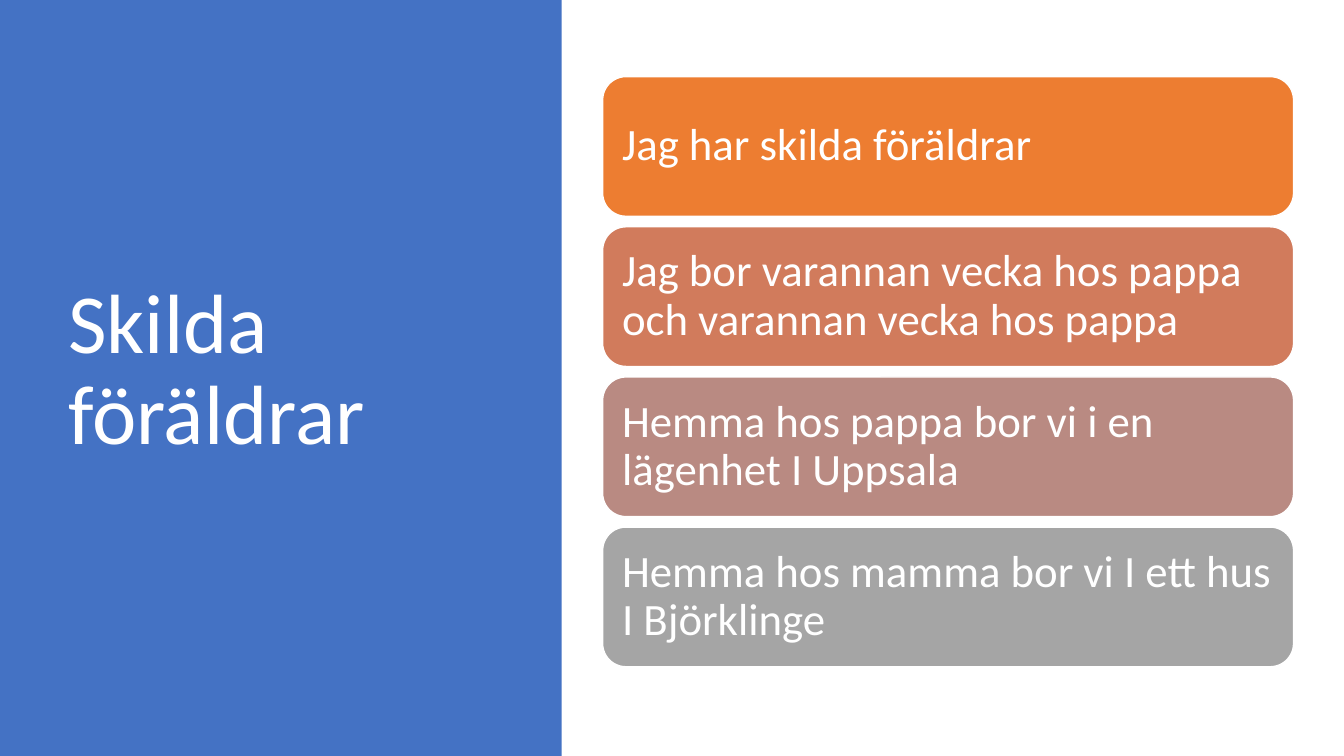
from pptx import Presentation
from pptx.dml.color import RGBColor
from pptx.enum.shapes import MSO_SHAPE
from pptx.enum.text import MSO_ANCHOR, PP_ALIGN
from pptx.util import Emu, Pt

RECTANGLE = MSO_SHAPE.RECTANGLE
ROUNDED = MSO_SHAPE.ROUNDED_RECTANGLE
MIDDLE = MSO_ANCHOR.MIDDLE
LEFT = PP_ALIGN.LEFT

WHITE = RGBColor(0xFF, 0xFF, 0xFF)
BLUE = RGBColor(0x44, 0x72, 0xC4)
ORANGE = RGBColor(0xED, 0x7D, 0x31)
TERRACOTTA = RGBColor(0xD1, 0x7B, 0x5C)
DUSTY_ROSE = RGBColor(0xB9, 0x8A, 0x82)
GRAY = RGBColor(0xA5, 0xA5, 0xA5)

PX = 9525  # EMU per px, 96 px to the inch
PAGE_WIDTH, PAGE_HEIGHT = 1280, 720
CARD_LEFT, CARD_TOP = 574, 73
CARD_WIDTH, CARD_HEIGHT, CARD_GAP = 658, 133, 10

CARDS = [
    ("Jag har skilda föräldrar", ORANGE),
    ("Jag bor varannan vecka hos pappa och varannan vecka hos pappa", TERRACOTTA),
    ("Hemma hos pappa bor vi i en lägenhet I Uppsala", DUSTY_ROSE),
    ("Hemma hos mamma bor vi I ett hus I Björklinge", GRAY),
]


def px(*lengths):
    return [Emu(length * PX) for length in lengths]


class SlideBuilder:
    font_name = "Calibri"
    font_color = WHITE

    def __init__(self, deck):
        self.page = deck.slides.add_slide(deck.slide_layouts[6])

    def set_text(self, box, text, size, inset_x, inset_y):
        frame = box.text_frame
        side, edge = px(inset_x, inset_y)
        frame_format = {
            "word_wrap": True, "vertical_anchor": MIDDLE,
            "margin_left": side, "margin_right": side,
            "margin_top": edge, "margin_bottom": edge,
        }
        for name, value in frame_format.items():
            setattr(frame, name, value)
        para = frame.paragraphs[0]
        para.alignment = LEFT
        para.line_spacing = 0.9
        span = para.add_run()
        span.text = text
        for name, value in {"name": self.font_name, "size": Pt(size)}.items():
            setattr(span.font, name, value)
        span.font.color.rgb = self.font_color

    def shape(self, kind, bounds, color, outline=None):
        box = self.page.shapes.add_shape(kind, *px(*bounds))
        box.shadow.inherit = False
        box.fill.solid()
        box.fill.fore_color.rgb = color
        if outline is None:
            box.line.fill.background()
        else:
            box.line.color.rgb = outline
            box.line.width = Pt(1)
        return box

    def title(self, bounds, text):
        box = self.page.shapes.add_textbox(*px(*bounds))
        self.set_text(box, text, 60, 10, 5)

    def card(self, bounds, text, color):
        box = self.shape(ROUNDED, bounds, color, WHITE)
        self.set_text(box, text, 32, 12, 12)


def main():
    deck = Presentation()
    deck.slide_width, deck.slide_height = px(PAGE_WIDTH, PAGE_HEIGHT)
    builder = SlideBuilder(deck)

    # Title panel
    builder.shape(RECTANGLE, (0, 0, 535, PAGE_HEIGHT), BLUE)
    builder.title((55, 65, 399, 578), "Skilda föräldrar")

    # Stack of cards
    for index, (text, color) in enumerate(CARDS):
        top = CARD_TOP + index * (CARD_HEIGHT + CARD_GAP)
        builder.card((CARD_LEFT, top, CARD_WIDTH, CARD_HEIGHT), text, color)

    deck.save("out.pptx")


if __name__ == "__main__":
    main()
